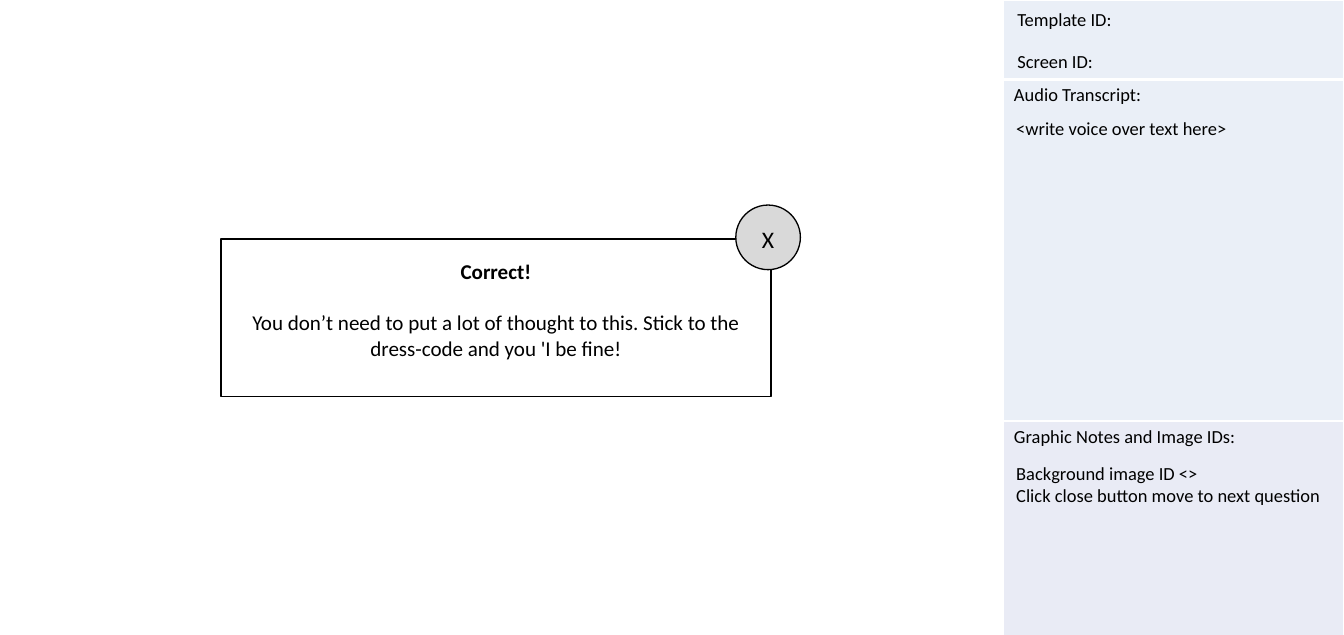
import dataclasses

import pptx
import pptx.dml.color
import pptx.enum.shapes
import pptx.enum.text
import pptx.oxml
import pptx.oxml.ns
import pptx.util

Cm = pptx.util.Cm
Pt = pptx.util.Pt
Shape = pptx.enum.shapes.MSO_SHAPE
Align = pptx.enum.text.PP_ALIGN
Anchor = pptx.enum.text.MSO_ANCHOR


@dataclasses.dataclass(frozen=True)
class Theme:
    font: str = "Calibri"
    ink: str = "000000"
    paper: str = "FFFFFF"
    pale: str = "EAEFF7"
    mist: str = "E9EBF5"
    grey: str = "D9D9D9"
    note: int = 14
    body: int = 16
    mark: int = 18
    line: int = 1
    rule: int = 3


theme = Theme()


def tint(code):
    return pptx.dml.color.RGBColor.from_string(code)


def write(para, text, size, bold=False):
    run = para.add_run()
    run.text = text
    run.font.name = theme.font
    run.font.size = Pt(size)
    run.font.bold = bold
    run.font.color.rgb = tint(theme.ink)


def label(slide, box, lines, size=theme.note, wrap=True):
    frame = slide.shapes.add_textbox(*map(Cm, box)).text_frame
    frame.word_wrap = wrap
    para = frame.paragraphs[0]
    for index, line in enumerate(lines):
        if index:
            para.add_line_break()
        write(para, line, size)


def block(slide, kind, box, fill):
    shape = slide.shapes.add_shape(kind, *map(Cm, box))
    shape.shadow.inherit = False
    shape.fill.solid()
    shape.fill.fore_color.rgb = tint(fill)
    shape.line.color.rgb = tint(theme.ink)
    shape.line.width = Pt(theme.line)
    return shape


def border(cell, base):
    props = cell._tc.get_or_add_tcPr()
    sides = {"lnL": theme.line, "lnR": theme.line, "lnT": theme.line, "lnB": base}
    for index, (side, width) in enumerate(sides.items()):
        props.insert(index, pptx.oxml.parse_xml(
            f'<a:{side} {pptx.oxml.ns.nsdecls("a")} w="{Pt(width)}">'
            f'<a:solidFill><a:srgbClr val="{theme.paper}"/></a:solidFill></a:{side}>'))


def panel(slide, box):
    left, top, width, height = box
    rows = [
        (2.13, "", theme.pale, theme.rule),
        (9.14, "Audio Transcript:", theme.pale, theme.line),
        (5.74, "Graphic Notes and Image IDs:", theme.mist, theme.line),
    ]
    grid = slide.shapes.add_table(len(rows), 1, *map(Cm, box)).table
    grid.first_row = grid.horz_banding = False
    for index, (tall, text, fill, base) in enumerate(rows):
        grid.rows[index].height = Cm(tall)
        cell = grid.cell(index, 0)
        cell.margin_left = cell.margin_right = Cm(0.28)
        cell.fill.solid()
        cell.fill.fore_color.rgb = tint(fill)
        border(cell, base)
        if text:
            write(cell.text_frame.paragraphs[0], text, theme.note)
    notes = [
        (0.12, 0.1, ["Template ID:"]),
        (0.12, 1.22, ["Screen ID:"]),
        (0.09, 3.02, ["<write voice over text here>"]),
        (0.09, 12.24, ["Background image ID <> ", "Click close button move to next question"]),
    ]
    for inset, drop, lines in notes:
        label(slide, (left + inset, top + drop, width - inset, 0.86), lines)


def popup(slide, box):
    left, top, width, height = box
    frame = block(slide, Shape.RECTANGLE, box, theme.paper).text_frame
    frame.word_wrap = True
    frame.vertical_anchor = Anchor.TOP
    frame.margin_left = frame.margin_right = Cm(0.53)
    frame.margin_top = frame.margin_bottom = Cm(0.53)
    head = frame.paragraphs[0]
    head.space_after = Pt(19.5)
    write(head, "Correct!", theme.body, True)
    body = frame.add_paragraph()
    write(body, "You don’t need to put a lot of thought to this. Stick to the "
                "dress-code and you 'I be ﬁne!", theme.body)
    for para in frame.paragraphs:
        para.alignment = Align.CENTER
    button(slide, (left + width - 0.94, top - 0.91, 1.73, 1.73))


def button(slide, box):
    left, top, width, height = box
    block(slide, Shape.OVAL, box, theme.grey)
    label(slide, (left + 0.45, top + 0.4, 0.84, 1.02), ["X"], theme.mark, False)


def main():
    deck = pptx.Presentation()
    deck.slide_width, deck.slide_height = Cm(36), Cm(17)
    slide = deck.slides.add_slide(deck.slide_layouts[6])
    panel(slide, (26.88, 0, 9.12, 17.01))
    popup(slide, (5.92, 6.4, 14.73, 4.22))
    deck.save("out.pptx")


if __name__ == "__main__":
    main()
